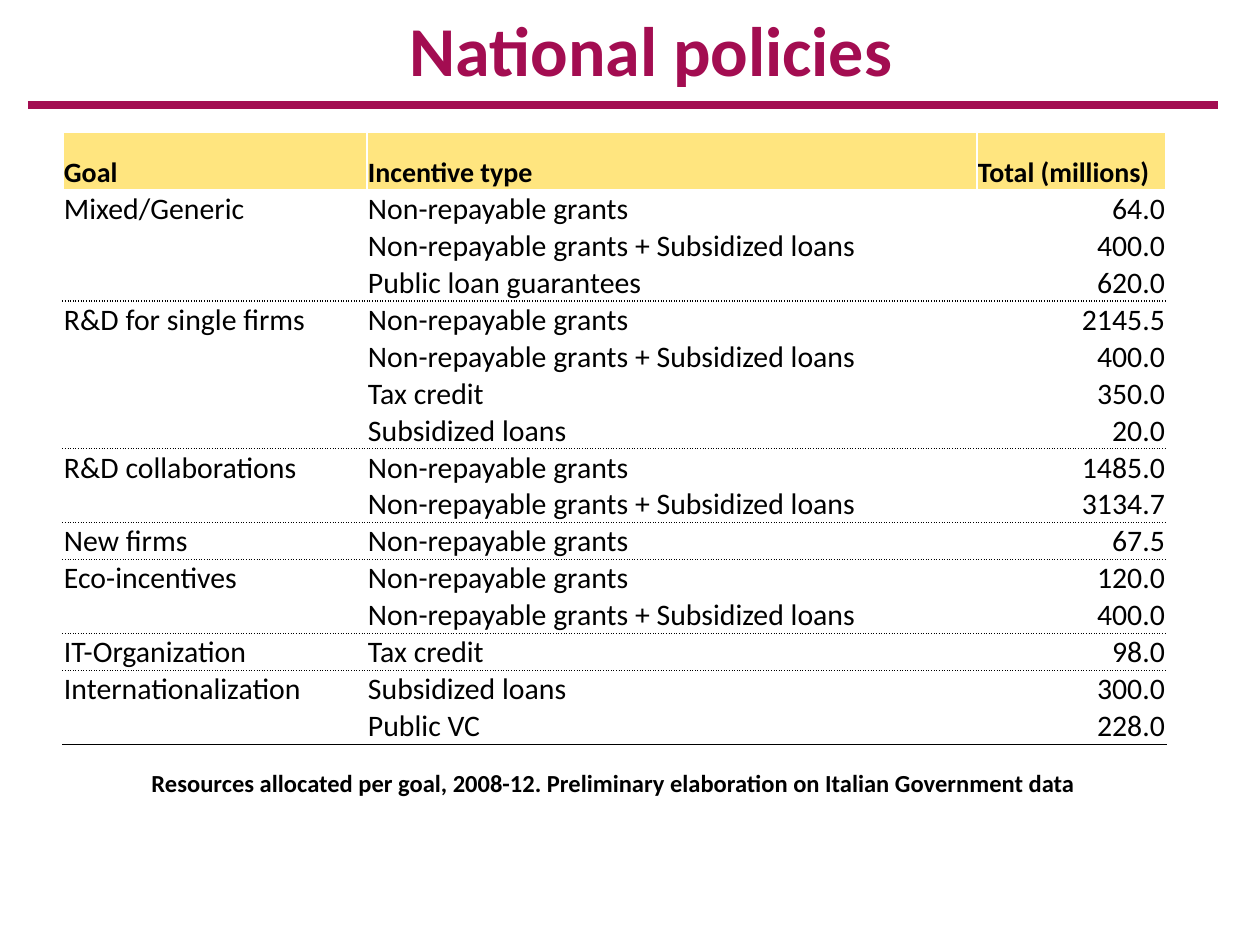
from pptx import Presentation
from pptx.dml.color import RGBColor
from pptx.enum.shapes import MSO_CONNECTOR
from pptx.enum.text import MSO_ANCHOR as Anchor, PP_ALIGN as Align
from pptx.oxml.ns import qn
from pptx.util import Pt
from lxml.etree import SubElement

EMU_PER_PX = 914400 / 126
FONT = "Calibri"
MAROON = RGBColor(0xA3, 0x0D, 0x51)
BLACK = RGBColor(0, 0, 0)
GOLD = RGBColor(0xFF, 0xCC, 0x00)

HEADER = ("Goal", "Incentive type", "Total (millions)")
GRANTS = "Non-repayable grants"
MIXED = "Non-repayable grants + Subsidized loans"
LOANS = "Subsidized loans"
CREDIT = "Tax credit"
GOALS = [
    ("Mixed/Generic", [(GRANTS, 64.0), (MIXED, 400.0), ("Public loan guarantees", 620.0)]),
    ("R&D for single firms", [(GRANTS, 2145.5), (MIXED, 400.0), (CREDIT, 350.0), (LOANS, 20.0)]),
    ("R&D collaborations", [(GRANTS, 1485.0), (MIXED, 3134.7)]),
    ("New firms", [(GRANTS, 67.5)]),
    ("Eco-incentives", [(GRANTS, 120.0), (MIXED, 400.0)]),
    ("IT-Organization", [(CREDIT, 98.0)]),
    ("Internationalization", [(LOANS, 300.0), ("Public VC", 228.0)]),
]
COLUMN_WIDTHS = (304, 610, 189)
HEADER_HEIGHT, ROW_HEIGHT = 58, 37


def px(*lengths):
    """Turn pixel lengths into a list of EMU."""
    return [round(length * EMU_PER_PX) for length in lengths]


def format_paragraph(paragraph, size, color=BLACK, bold=False, align=Align.LEFT):
    """Set the alignment and font of a paragraph."""
    paragraph.alignment = align
    font = paragraph.font
    font.name, font.size, font.bold = FONT, Pt(size), bold
    font.color.rgb = color


def add_title(slide, text):
    """Fill and place the title placeholder."""
    title = slide.shapes.title
    title.left, title.top, title.width, title.height = px(84, 0, 1134, 136)
    frame = title.text_frame
    frame.text = text
    frame.vertical_anchor = Anchor.TOP
    format_paragraph(frame.paragraphs[0], 40, MAROON, True, Align.CENTER)


def add_rule(slide):
    """Draw the heavy rule under the title."""
    rule = slide.shapes.add_connector(MSO_CONNECTOR.STRAIGHT, *px(28, 105, 1218, 105))
    rule.line.color.rgb = MAROON
    rule.line.width = Pt(4.5)
    SubElement(rule._element.spPr, qn("a:effectLst"))


def add_caption(slide, text):
    """Add the centred caption below the table."""
    frame = slide.shapes.add_textbox(*px(73, 762, 1081, 43)).text_frame
    frame.word_wrap = True
    frame.text = text
    format_paragraph(frame.paragraphs[0], 14, bold=True, align=Align.CENTER)


def add_border(cell, side, dash):
    """Add a one-point black border to a cell side, T or B."""
    line = SubElement(cell._tc.get_or_add_tcPr(), qn(f"a:ln{side}"), w=str(Pt(1)))
    fill = SubElement(line, qn("a:solidFill"))
    SubElement(fill, qn("a:srgbClr"), val=str(BLACK))
    SubElement(line, qn("a:prstDash"), val=dash)


def fill_cell(cell, text, size, bold=False, align=Align.LEFT):
    """Write a cell's text at the bottom of tight margins."""
    cell.margin_left, cell.margin_right, cell.margin_top, cell.margin_bottom = px(1, 1, 1, 0)
    cell.vertical_anchor = Anchor.BOTTOM
    cell.text = text
    paragraph = cell.text_frame.paragraphs[0]
    format_paragraph(paragraph, size, bold=bold, align=align)
    if not text:
        SubElement(paragraph._p, qn("a:endParaRPr"), sz=str(size * 100))


def fill_header(table):
    """Write the header row on half-transparent gold."""
    for cell, text in zip(table.rows[0].cells, HEADER):
        fill_cell(cell, text, 16, bold=True)
        cell.fill.solid()
        cell.fill.fore_color.rgb = GOLD
        color = cell._tc.tcPr.find(".//" + qn("a:srgbClr"))
        SubElement(color, qn("a:alpha"), val="50000")


def fill_goal(table, start, goal, incentives):
    """Write one goal's rows, with borders between goals and below the last."""
    end = start + len(incentives) - 1
    last_dash = "solid" if end == len(table.rows) - 1 else "sysDot"
    for row, (incentive, total) in enumerate(incentives, start):
        texts = (goal if row == start else "", incentive, f"{total:.1f}")
        for column, text in enumerate(texts):
            cell = table.cell(row, column)
            fill_cell(cell, text, 17, align=Align.RIGHT if column == 2 else Align.LEFT)
            if row == start > 1:
                add_border(cell, "T", "sysDot")
            if row == end:
                add_border(cell, "B", last_dash)
            cell.fill.background()


def add_incentive_table(slide):
    """Add the table of resources per goal."""
    count = sum(len(incentives) for _, incentives in GOALS)
    size = (sum(COLUMN_WIDTHS), HEADER_HEIGHT + count * ROW_HEIGHT)
    table = slide.shapes.add_table(count + 1, len(HEADER), *px(63, 132, *size)).table
    table.first_row = table.horz_banding = False
    for column, width in zip(table.columns, px(*COLUMN_WIDTHS)):
        column.width = width
    for row, height in zip(table.rows, px(HEADER_HEIGHT, *[ROW_HEIGHT] * count)):
        row.height = height
    fill_header(table)
    start = 1
    for goal, incentives in GOALS:
        fill_goal(table, start, goal, incentives)
        start += len(incentives)


def main():
    """Build and save the slide."""
    presentation = Presentation()
    presentation.slide_width, presentation.slide_height = px(1260, 945)
    slide = presentation.slides.add_slide(presentation.slide_layouts[5])
    add_title(slide, "National policies")
    add_rule(slide)
    add_caption(slide, "Resources allocated per goal, 2008-12. "
                       "Preliminary elaboration on Italian Government data")
    add_incentive_table(slide)
    presentation.save("out.pptx")


if __name__ == "__main__":
    main()
